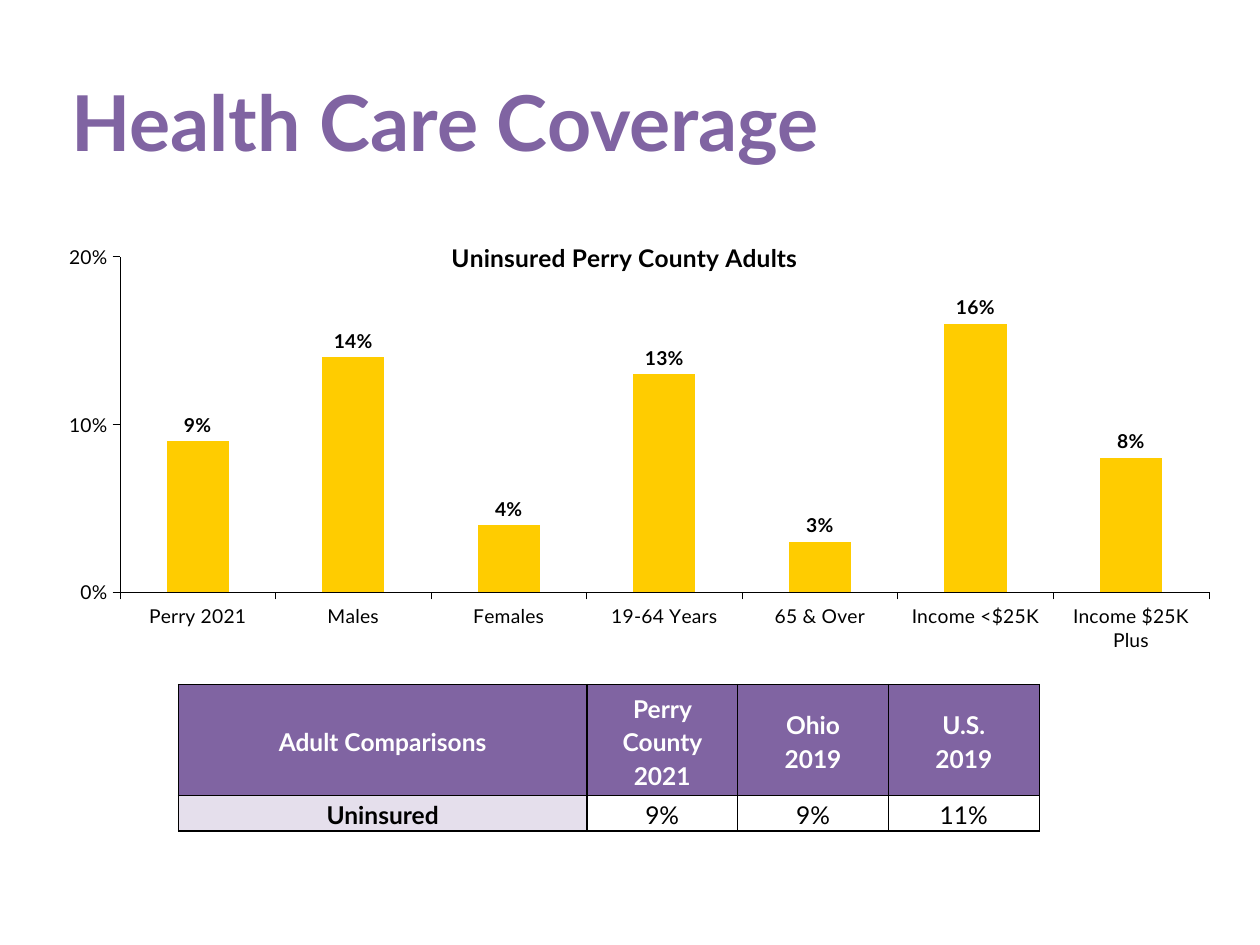
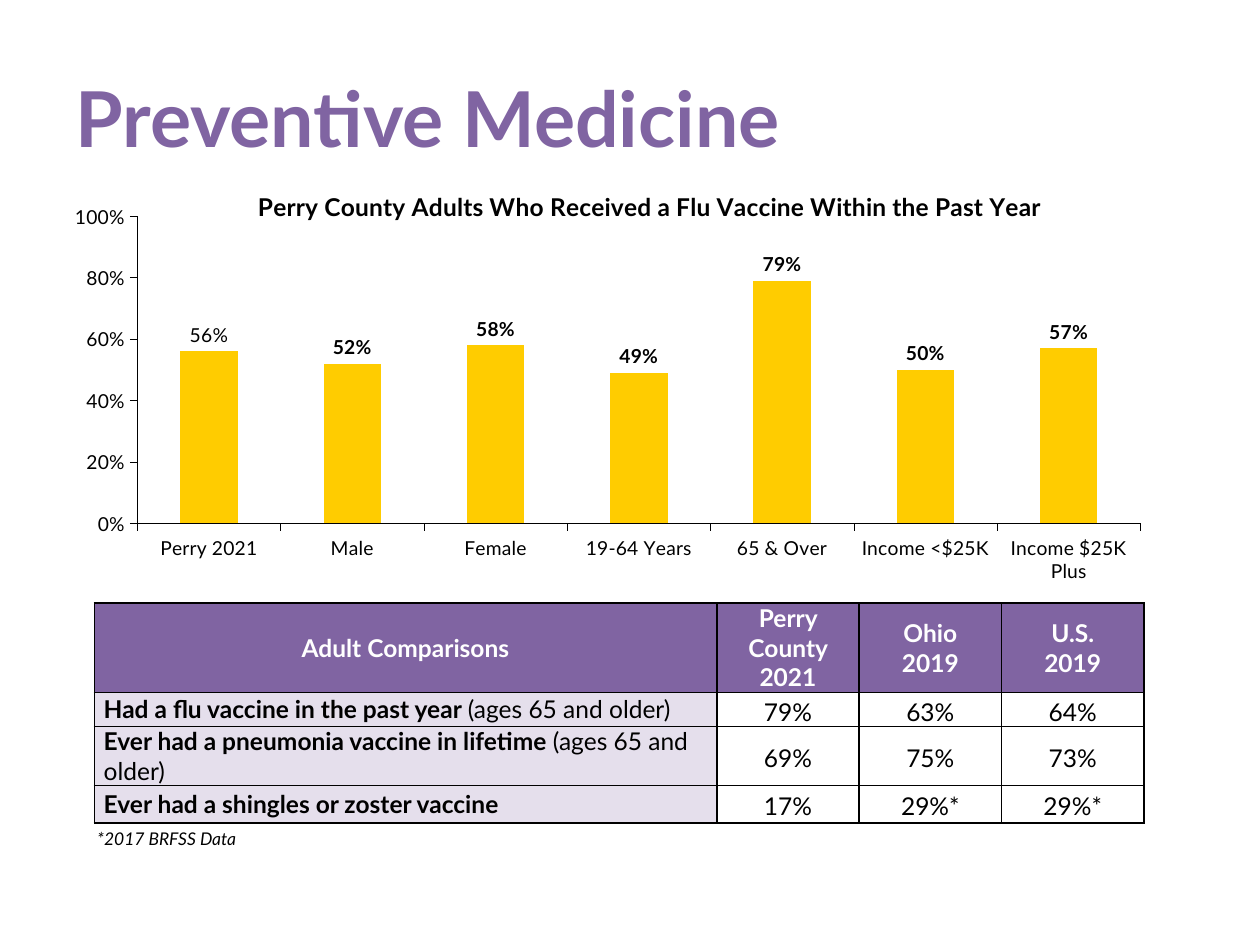
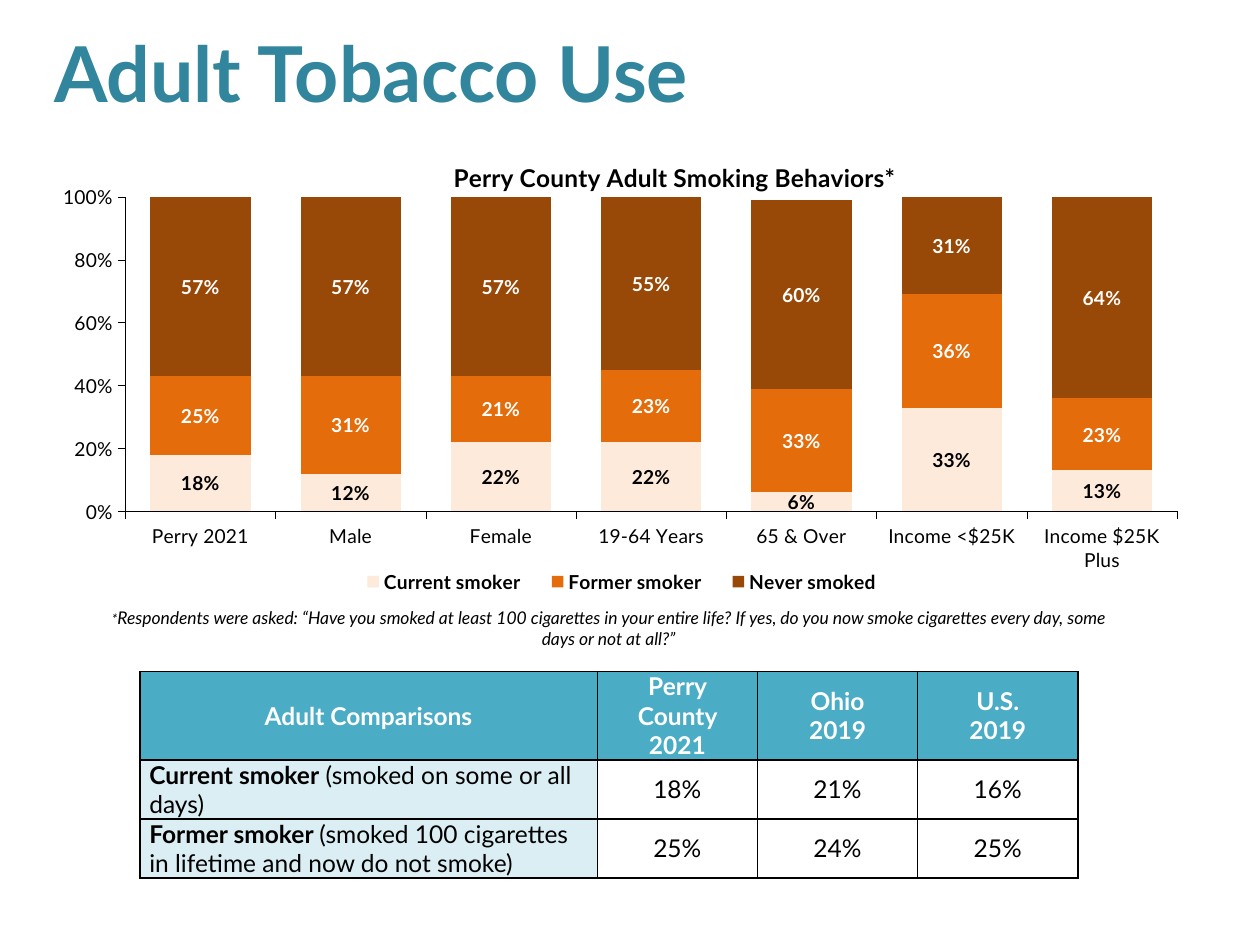
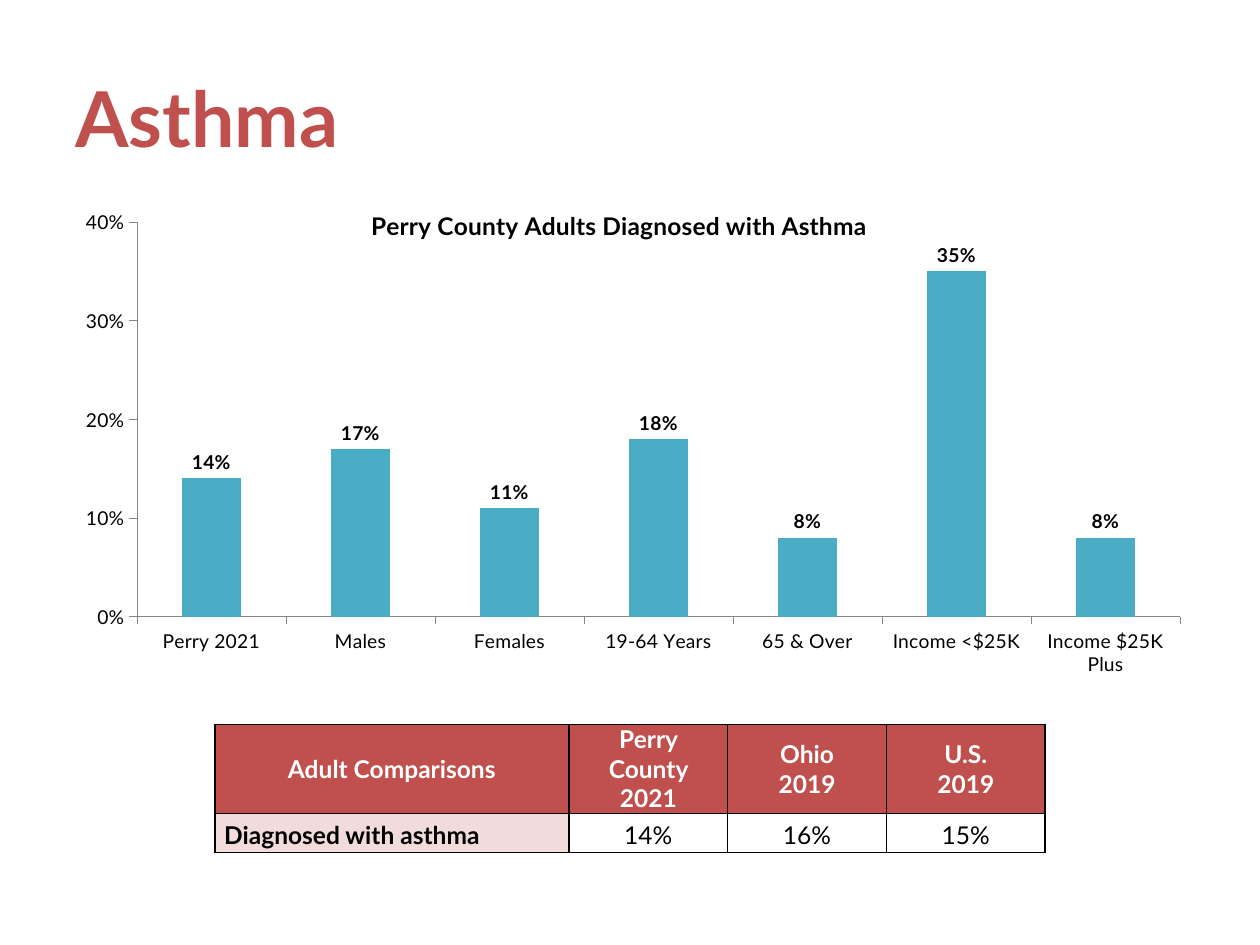
import pptx
import pptx.chart.data
import pptx.dml.color
import pptx.enum.chart
import pptx.enum.text
import pptx.oxml
import pptx.oxml.ns
import pptx.util

Cm, Pt = pptx.util.Cm, pptx.util.Pt
ALIGN = pptx.enum.text.PP_ALIGN
MIDDLE = pptx.enum.text.MSO_ANCHOR.MIDDLE
KIND = pptx.enum.chart.XL_CHART_TYPE
SPOT = pptx.enum.chart.XL_LABEL_POSITION

FONT = "Lato"
BLACK, WHITE, GREY = "000000", "FFFFFF", "868686"
PURPLE, LILAC = "8064A2", "E5DFEC"
TEAL, AQUA, ICE = "31859C", "4BACC6", "DAEEF3"
RED, PINK = "C0504D", "F2DBDB"
GOLD, CREAM, ORANGE, BROWN = "FFCC00", "FDEADA", "E46C0A", "984807"

HEADS = ["Adult Comparisons", "Perry County 2021", "Ohio\n2019", "U.S.\n2019"]
AGES = ["19-64 Years", "65 & Over", "Income <$25K", "Income $25K Plus"]
ONE = ["Perry 2021", "Male", "Female"] + AGES
MANY = ["Perry 2021", "Males", "Females"] + AGES


def color(code):
    return pptx.dml.color.RGBColor.from_string(code)


def style(font, size, tint=BLACK, bold=False, italic=False):
    font.name, font.size = FONT, Pt(size)
    font.bold, font.italic = bold, italic
    font.color.rgb = color(tint)


def paint(shape, code):
    shape.fill.solid()
    shape.fill.fore_color.rgb = color(code)


def add_text(slide, box, wrap=True):
    frame = slide.shapes.add_textbox(*map(Cm, box)).text_frame
    frame.word_wrap = wrap
    return frame


def add_title(slide, text, tint, box=(1.27, 0.76, 22.86, 3.18)):
    frame = add_text(slide, box)
    frame.vertical_anchor = MIDDLE
    frame.text = text
    style(frame.paragraphs[0].runs[0].font, 44, tint, bold=True)


def add_note(slide, box, parts, align=ALIGN.LEFT, wrap=True, indent=0):
    """Write an italic note from (text, size) parts."""
    para = add_text(slide, box, wrap).paragraphs[0]
    para.alignment = align
    if indent:
        para._p.get_or_add_pPr().set("indent", str(Cm(indent)))
    for text, size in parts:
        run = para.add_run()
        run.text = text
        style(run.font, size, italic=True)


def add_edges(cell):
    props = cell._tc.get_or_add_tcPr()
    for spot, side in enumerate("LRTB"):
        props.insert(spot, pptx.oxml.parse_xml(
            f'<a:ln{side} {pptx.oxml.ns.nsdecls("a")} w="{Pt(1)}"><a:solidFill>'
            f'<a:srgbClr val="{BLACK}"/></a:solidFill></a:ln{side}>'))


def fill_cell(cell, parts, fill, tint, align, space):
    """Fill a cell from (text, bold) parts."""
    cell.margin_left = cell.margin_right = Cm(0.19)
    cell.margin_top = cell.margin_bottom = 0
    cell.vertical_anchor = MIDDLE
    paint(cell, fill)
    add_edges(cell)
    frame = cell.text_frame
    frame.text = parts[0][0]
    for text, bold in parts[1:]:
        frame.paragraphs[0].add_run().text = text
    for para in frame.paragraphs:
        para.alignment, para.line_spacing = align, space
        for run, part in zip(para.runs, parts):
            style(run.font, 14, tint, bold=part[1])


def add_table(slide, spot, wide, slim, highs, rows, fills,
              spaces=(1, 1, 1), align=ALIGN.LEFT):
    """Place a comparison table; spaces are for heads, labels and values."""
    size = wide + 3 * slim, sum(highs)
    table = slide.shapes.add_table(len(highs), 4, *map(Cm, spot + size)).table
    table.horz_banding = False
    for col, width in zip(table.columns, [wide] + [slim] * 3):
        col.width = Cm(width)
    for row, high in zip(table.rows, highs):
        row.height = Cm(high)
    dark, pale = fills
    for col, head in enumerate(HEADS):
        fill_cell(table.cell(0, col), [(head, True)], dark, WHITE,
                  ALIGN.CENTER, spaces[0])
    for num, (label, rest, *vals) in enumerate(rows, 1):
        parts = [(label, True)] + ([(rest, False)] if rest else [])
        fill_cell(table.cell(num, 0), parts, pale, BLACK, align, spaces[1])
        for col, val in enumerate(vals, 1):
            fill_cell(table.cell(num, col), [(val, False)], WHITE, BLACK,
                      ALIGN.CENTER, spaces[2])


def set_layout(node, mark, box, spot, inner=False):
    """Lay a chart part out after its child mark, from the box's corner."""
    for old in node.xpath("c:layout"):
        node.remove(old)
    tags = '<c:layoutTarget val="inner"/>' if inner else ""
    tags += "".join(f'<c:{key}Mode val="edge"/>' for key in "xy")
    for key, val, full in zip("xywh", spot, box[2:] * 2):
        tags += f'<c:{key} val="{val / full:.4f}"/>'
    layout = pptx.oxml.parse_xml(
        f'<c:layout {pptx.oxml.ns.nsdecls("c")}>'
        f'<c:manualLayout>{tags}</c:manualLayout></c:layout>')
    if mark:
        node.xpath(mark)[0].addnext(layout)
    else:
        node.insert(0, layout)


def set_head(chart, box, text, spot):
    chart.has_title = True
    head = chart.chart_title
    head.text_frame.text = text
    style(head.text_frame.paragraphs[0].runs[0].font, 14, bold=True)
    set_layout(head._element, "c:tx", box, spot)
    for mark in head._element.xpath("c:overlay"):
        mark.set("val", "1")


def set_axes(chart, top, step, line):
    for axis in (chart.category_axis, chart.value_axis):
        axis.has_major_gridlines = False
        axis.major_tick_mark = pptx.enum.chart.XL_TICK_MARK.OUTSIDE
        axis.format.line.color.rgb = color(line)
        axis.format.line.width = Pt(0.25)
        style(axis.tick_labels.font, 11)
    chart.category_axis.tick_label_position = (
        pptx.enum.chart.XL_TICK_LABEL_POSITION.LOW)
    axis.minimum_scale, axis.maximum_scale, axis.major_unit = 0, top, step
    axis.tick_labels.number_format = "0%"
    axis.tick_labels.number_format_is_linked = False


def set_key(chart, box, spot):
    chart.has_legend = True
    key = chart.legend
    key.position = pptx.enum.chart.XL_LEGEND_POSITION.BOTTOM
    key.include_in_layout = False
    style(key.font, 11, bold=True)
    set_layout(key._element, "c:legendPos", box, spot)


def add_chart(slide, box, head, spot, plot, cats, bars, top, step,
              line=BLACK, stack=False):
    """Place a column chart; bars are (name, values, fill, label colour)."""
    data = pptx.chart.data.CategoryChartData(number_format="0%")
    data.categories = cats
    for name, vals, *_ in bars:
        data.add_series(name, [val / 100 for val in vals])
    kind = KIND.COLUMN_STACKED if stack else KIND.COLUMN_CLUSTERED
    chart = slide.shapes.add_chart(kind, *map(Cm, box), data).chart
    chart.has_legend = False
    style(chart.font, 10)
    set_head(chart, box, head, spot)
    area = chart._chartSpace.xpath("c:chart/c:plotArea")[0]
    set_layout(area, None, box, plot, inner=True)
    set_axes(chart, top, step, line)
    group = chart.plots[0]
    group.vary_by_categories = False
    group.gap_width = 50 if stack else 150
    group.overlap = 100 if stack else 0
    for bar, (name, vals, fill, tint) in zip(group.series, bars):
        paint(bar.format, fill)
        tags = bar.data_labels
        tags.show_value = True
        tags.number_format, tags.number_format_is_linked = "0%", False
        tags.position = SPOT.CENTER if stack else SPOT.OUTSIDE_END
        style(tags.font, 11, tint, bold=True)
    return chart


def show_cover(slide):
    add_title(slide, "Health Care Coverage", PURPLE, (1.19, 0.84, 22.86, 3.18))
    add_table(slide, (3.6, 13.8), 8.23, 3.04, [2.24, 0.71],
              [("Uninsured", "", "9%", "9%", "11%")], (PURPLE, LILAC),
              (1.15, 1.15, 1.15), ALIGN.CENTER)
    add_chart(slide, (1.19, 4.11, 23.24, 9.02), "Uninsured Perry County Adults",
              (7.82, 0.63), (1.23, 1.07, 21.95, 6.79), MANY,
              [("Series 1", [9, 14, 4, 13, 3, 16, 8], GOLD, BLACK)], 0.2, 0.1)


def show_shots(slide):
    add_note(slide, (1.07, 16.57, 4.06, 0.69), [("*2017 BRFSS Data", 10)],
             wrap=False, indent=0.64)
    add_title(slide, "Preventive Medicine", PURPLE)
    old = "(ages 65 and older)"
    rows = [
        ("Had a flu vaccine in the past year ", old, "79%", "63%", "64%"),
        ("Ever had a pneumonia vaccine in lifetime ", old, "69%", "75%", "73%"),
        ("Ever had a shingles or zoster vaccine", "", "17%", "29%*", "29%*"),
    ]
    add_table(slide, (1.9, 12.16), 12.55, 2.87, [1.8, 0.65, 1.19, 0.76],
              rows, (PURPLE, LILAC), (1, 1, 1.15))
    chart = add_chart(
        slide, (1.27, 3.38, 22.23, 8.79),
        "Perry County Adults Who Received a Flu Vaccine Within the Past Year",
        (3.84, 0.33), (1.5, 0.98, 20.22, 6.19), ONE,
        [("Series 1", [56, 52, 58, 49, 79, 50, 57], GOLD, BLACK)], 1, 0.2)
    tag = chart.plots[0].series[0].points[0].data_label
    tag.text_frame.text = "56%"
    style(tag.text_frame.paragraphs[0].runs[0].font, 11)
    tag.position = SPOT.OUTSIDE_END


def show_smoke(slide):
    add_title(slide, "Adult Tobacco Use", TEAL, (0.84, 0.08, 22.86, 2.72))
    ask = ("Respondents were asked: “Have you smoked at least 100 cigarettes in "
           "your entire life? If yes, do you now smoke cigarettes every day, "
           "some days or not at all?”")
    add_note(slide, (1.88, 12.12, 20.78, 1.1), [("*", 8), (ask, 10)],
             ALIGN.CENTER)
    rows = [
        ("Current smoker", " (smoked on some or all days)",
         "18%", "21%", "16%"),
        ("Former smoker ",
         "(smoked 100 cigarettes in lifetime and now do not smoke)",
         "25%", "24%", "25%"),
    ]
    add_table(slide, (2.82, 13.54), 9.22, 3.23, [1.78, 1.19, 1.19],
              rows, (AQUA, ICE))
    bars = [
        ("Current smoker", [18, 12, 22, 22, 6, 33, 13], CREAM, BLACK),
        ("Former smoker", [25, 31, 21, 23, 33, 36, 23], ORANGE, WHITE),
        ("Never smoked", [57, 57, 57, 55, 60, 31, 64], BROWN, WHITE),
    ]
    box = 1.27, 2.95, 22.86, 9.16
    chart = add_chart(slide, box, "Perry County Adult Smoking Behaviors*",
                      (7.73, 0.17), (1.18, 1.02, 21.28, 6.34), ONE, bars,
                      1, 0.2, stack=True)
    set_key(chart, box, (5.58, 8.4, 11.29, 0.75))


def show_asthma(slide):
    add_title(slide, "Asthma", RED)
    add_chart(slide, (1.57, 3.84, 22.23, 9.78),
              "Perry County Adults Diagnosed with Asthma", (5.82, 0.27),
              (1.19, 0.64, 21.03, 8.04), MANY,
              [("Series 1", [14, 17, 11, 18, 8, 35, 8], AQUA, BLACK)],
              0.4, 0.1, GREY)
    add_table(slide, (4.33, 14.6), 7.14, 3.2, [1.8, 0.79],
              [("Diagnosed with asthma", "", "14%", "16%", "15%")],
              (RED, PINK), (1, 1.15, 1.15))


def main():
    deck = pptx.Presentation()
    deck.slide_width, deck.slide_height = Cm(25.4), Cm(19.05)
    for show in (show_cover, show_shots, show_smoke, show_asthma):
        show(deck.slides.add_slide(deck.slide_layouts[6]))
    deck.save("out.pptx")


if __name__ == "__main__":
    main()
